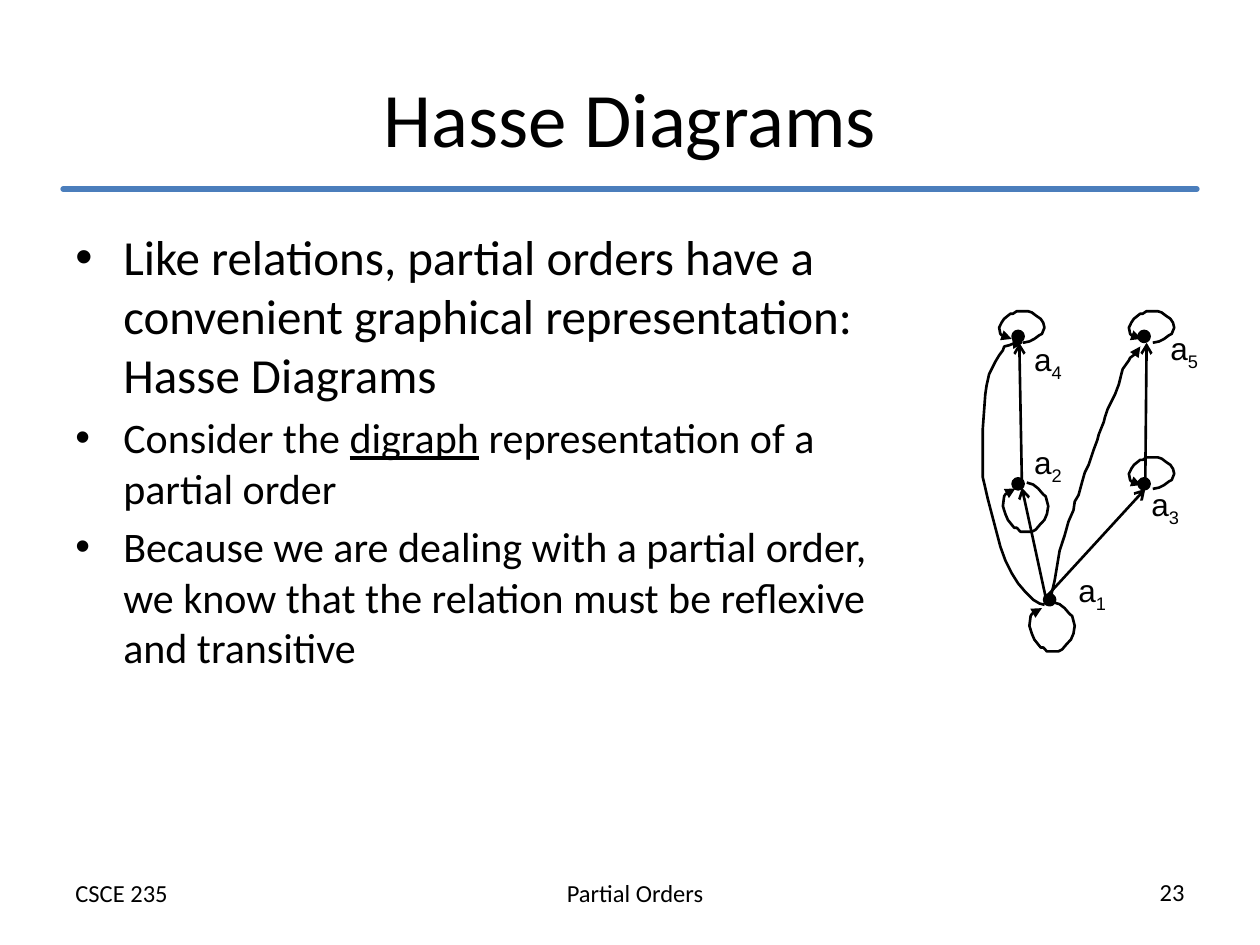
from lxml import etree
from pptx import Presentation
from pptx.dml.color import RGBColor
from pptx.enum.shapes import MSO_CONNECTOR, MSO_SHAPE
from pptx.enum.text import MSO_ANCHOR, PP_ALIGN
from pptx.oxml.ns import qn
from pptx.util import Inches, Pt

LEFT, MID, RIGHT = PP_ALIGN.LEFT, PP_ALIGN.CENTER, PP_ALIGN.RIGHT
TOP, CENTRE = MSO_ANCHOR.TOP, MSO_ANCHOR.MIDDLE
LINE, DOT = MSO_CONNECTOR.STRAIGHT, MSO_SHAPE.OVAL
BLACK, BLUE = "000000", "4B7EBC"


def color(code):
    return RGBColor.from_string(code)


class Deck:
    """Holds the style and the current slide."""

    font, label = "Calibri", "Arial"
    thin = 1.5

    def __init__(self, slide):
        self.shapes = slide.shapes

    def run(self, para, text, size, name=None, **extra):
        run = para.add_run()
        run.text = text
        look = {"name": name or self.font, "size": Pt(size), **extra}
        for key, value in look.items():
            setattr(run.font, key, value)
        run.font.color.rgb = color(BLACK)
        return run

    def box(self, x, y, w, h, wrap=True, anchor=TOP):
        frame = self.shapes.add_textbox(*map(Inches, (x, y, w, h))).text_frame
        look = {"word_wrap": wrap, "vertical_anchor": anchor}
        for key, value in look.items():
            setattr(frame, key, value)
        return frame

    def text(self, x, y, w, h, words, size, align=LEFT, anchor=TOP):
        para = self.box(x, y, w, h, anchor=anchor).paragraphs[0]
        para.alignment = align
        self.run(para, words, size)

    def bullets(self, x, y, w, h, items):
        frame = self.box(x, y, w, h)
        for i, (size, parts) in enumerate(items):
            para = frame.add_paragraph() if i else frame.paragraphs[0]
            para.space_before = Pt(size * 0.2)
            props = para._p.get_or_add_pPr()
            props.set("marL", str(Inches(0.38)))
            props.set("indent", str(Inches(-0.38)))
            etree.SubElement(props, qn("a:buFont")).set("typeface", "Arial")
            etree.SubElement(props, qn("a:buChar")).set("char", "•")
            for words, under in parts:
                self.run(para, words, size, underline=under)

    def name(self, x, y, index):
        para = self.box(x, y, 0.44, 0.4, wrap=False).paragraphs[0]
        self.run(para, "a", 18, self.label)
        sub = self.run(para, index, 18, self.label)
        sub.font._element.set("baseline", "-25000")

    def dot(self, x, y):
        shape = self.shapes.add_shape(DOT, *map(Inches, (x, y, 0.08, 0.08)))
        shape.shadow.inherit = False
        shape.fill.solid()
        shape.fill.fore_color.rgb = color(BLACK)
        self.stroke(shape, BLACK, 2)

    def stroke(self, shape, code, width, tip=None):
        shape.line.color.rgb = color(code)
        shape.line.width = Pt(width)
        if tip:
            line = shape.line._get_or_add_ln()
            etree.SubElement(line, qn("a:tailEnd")).set("type", tip)

    def line(self, start, end, code=BLACK, width=thin, tip=None):
        ends = map(Inches, (*start, *end))
        shape = self.shapes.add_connector(LINE, *ends)
        self.stroke(shape, code, width, tip)
        etree.SubElement(shape._element.spPr, qn("a:effectLst"))
        return shape

    def curve(self, points):
        first, *rest = [(Inches(x), Inches(y)) for x, y in points]
        pen = self.shapes.build_freeform(*first)
        pen.add_line_segments(rest, close=False)
        shape = pen.convert_to_shape()
        shape.shadow.inherit = False
        shape.fill.background()
        self.stroke(shape, BLACK, self.thin, "triangle")

    def loop(self, x, y, below):
        # Loops below a node are the upper loop, flipped and stretched
        self.curve([(x + a, y + (0.39 * (1 - b / 0.25) if below else b))
                    for a, b in LOOP])


LOOP = [(0.19, 0.25), (0.24, 0.24), (0.28, 0.22), (0.32, 0.19), (0.34, 0.18),
        (0.36, 0.13), (0.35, 0.09), (0.33, 0.06), (0.3, 0.04), (0.26, 0.01),
        (0.23, 0), (0.14, 0), (0.11, 0.02), (0.09, 0.02), (0.04, 0.06),
        (0.02, 0.09), (0, 0.13), (0.01, 0.18), (0.02, 0.19), (0.06, 0.21),
        (0.1, 0.22)]
TO_A4 = [(8.29, 4.8), (8.25, 4.79), (8.2, 4.76), (8.14, 4.7), (8.08, 4.63),
         (8.03, 4.55), (7.98, 4.45), (7.94, 4.34), (7.89, 4.15), (7.84, 3.96),
         (7.81, 3.83), (7.8, 3.79), (7.8, 3.4), (7.82, 3.13), (7.83, 3.06),
         (7.85, 2.97), (7.9, 2.87), (7.93, 2.82), (7.96, 2.78), (7.97, 2.75),
         (8.01, 2.74), (8.06, 2.72), (8.12, 2.72)]
TO_A5 = [(8.33, 4.78), (8.37, 4.61), (8.39, 4.49), (8.41, 4.37), (8.45, 4.25),
         (8.48, 4.14), (8.52, 4.05), (8.53, 3.98), (8.56, 3.93), (8.59, 3.82),
         (8.61, 3.75), (8.64, 3.69), (8.66, 3.63), (8.68, 3.57), (8.71, 3.49),
         (8.72, 3.45), (8.76, 3.35), (8.77, 3.31), (8.79, 3.25), (8.82, 3.19),
         (8.85, 3.13), (8.88, 3.05), (8.9, 2.97), (8.91, 2.93), (8.96, 2.86),
         (8.97, 2.84), (9.01, 2.81), (9.01, 2.78), (9.05, 2.75)]
ITEMS = [
    (28, [("Like relations, partial orders have a convenient graphical "
           "representation: Hasse Diagrams", False)]),
    (24, [("Consider the ", False), ("digraph", True),
          (" representation of a partial order", False)]),
    (24, [("Because we are dealing with a partial order, we know that the "
           "relation must be reflexive and transitive", False)]),
]


def main():
    prs = Presentation()
    prs.slide_width, prs.slide_height = Inches(10), Inches(7.5)
    deck = Deck(prs.slides.add_slide(prs.slide_layouts[6]))

    # Footer
    deck.text(3.58, 6.92, 2.92, 0.34, "Partial Orders", 14, MID)
    deck.text(0.5, 6.92, 2.92, 0.34, "CSCE 235", 14)
    deck.text(6.58, 6.91, 2.92, 0.34, "23", 14, RIGHT)

    # Title, rule and body
    rule = deck.line((0.5, 1.5), (9.5, 1.5), BLUE, 3)
    rule.line._get_or_add_ln().set("cap", "rnd")
    deck.text(0.5, 0.3, 9, 1.25, "Hasse Diagrams", 44, MID, CENTRE)
    deck.bullets(0.5, 1.75, 6.75, 4.95, ITEMS)

    # Nodes
    for x, y in [(8.04, 2.63), (8.04, 3.8), (9.04, 2.63), (9.04, 3.8),
                 (8.29, 4.72)]:
        deck.dot(x, y)

    # Reflexive loops
    for x, y, below in [(8.17, 4.78, True), (8.96, 3.63, False),
                        (7.93, 2.47, False), (7.96, 3.83, True),
                        (8.96, 2.47, False)]:
        deck.loop(x, y, below)

    # Direct edges
    for start, end in [((8.11, 3.81), (8.09, 2.72)),
                       ((9.09, 3.8), (9.1, 2.72)),
                       ((8.31, 4.79), (8.11, 3.87)),
                       ((8.31, 4.73), (9.09, 3.88))]:
        deck.line(start, end, tip="arrow")

    # Transitive edges
    deck.curve(TO_A4)
    deck.curve(TO_A5)

    # Node names
    for x, y, index in [(8.46, 4.48, "1"), (8.11, 3.47, "2"),
                        (8.11, 2.65, "4"), (9.19, 2.56, "5"),
                        (9.04, 3.8, "3")]:
        deck.name(x, y, index)

    prs.save("out.pptx")


if __name__ == "__main__":
    main()
